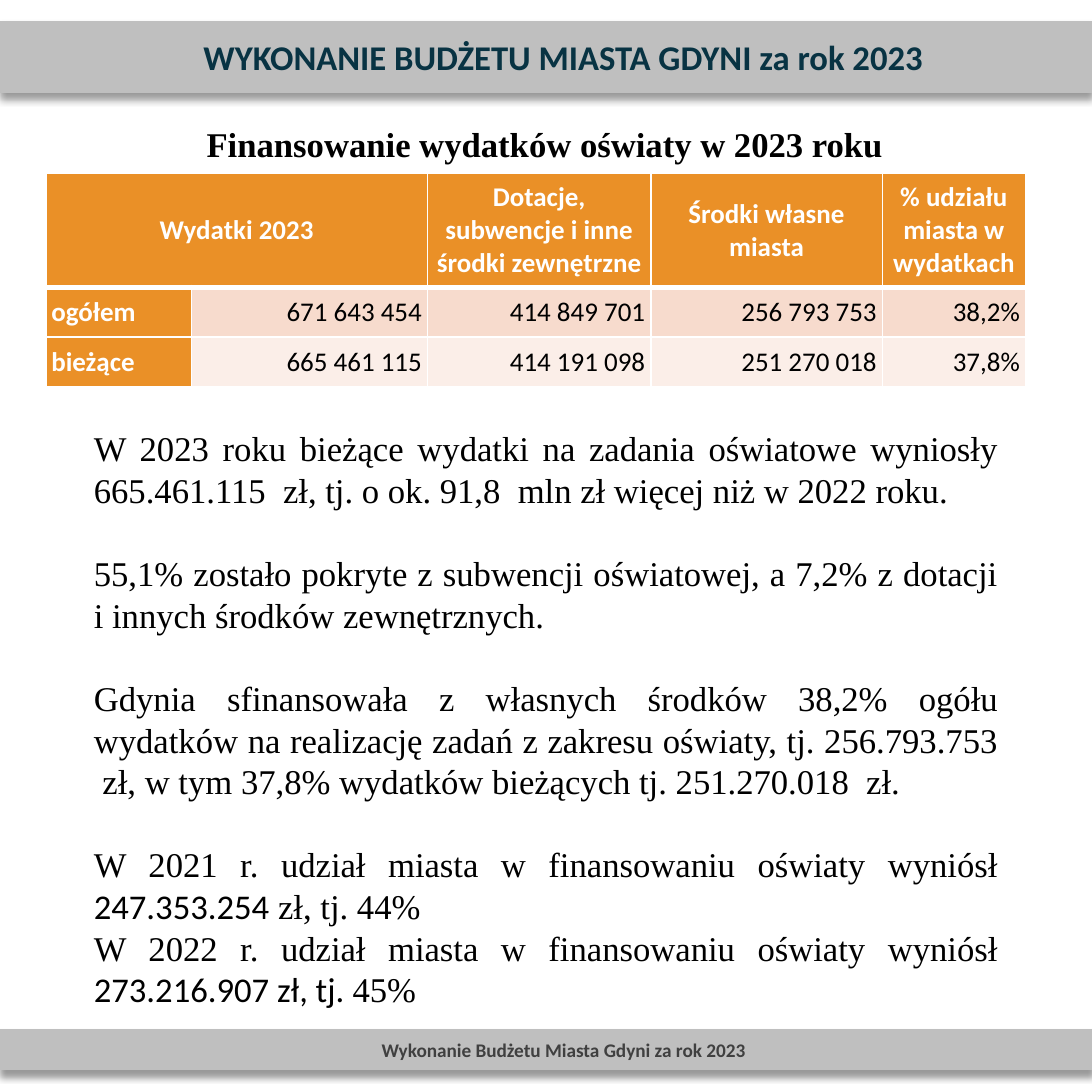
from dataclasses import dataclass

from lxml import etree
from pptx import Presentation
from pptx import util as u
from pptx.dml.color import RGBColor
from pptx.enum import shapes, text
from pptx.oxml import ns


@dataclass(frozen=True)
class Theme:
    sans: str = "Calibri"
    serif: str = "Times New Roman"
    bar: str = "BFBFBF"
    title: str = "083343"
    footer: str = "404040"
    ink: str = "000000"
    paper: str = "FFFFFF"
    accent: str = "EA9027"
    bands: tuple = ("F7DBCD", "FBEEE8")
    body_size: float = 18
    table_size: float = 14
    footer_size: float = 10
    body_leading: float = 21.6


THEME = Theme()
ALIGN = text.PP_ALIGN

HEADERS = [
    "Wydatki 2023",
    None,
    "Dotacje, subwencje i inne środki zewnętrzne",
    "Środki własne miasta",
    "% udziału miasta w wydatkach",
]
ROWS = [
    ["ogółem", "671 643 454", "414 849 701", "256 793 753", "38,2%"],
    ["bieżące", "665 461 115", "414 191 098", "251 270 018", "37,8%"],
]
COLUMN_WIDTHS = [2.67, 4.32, 4.09, 4.24, 2.62]
ROW_HEIGHTS = [2.08, 0.91, 0.91]

SERIF, SANS = THEME.serif, THEME.sans
BODY = [
    ([("W 2023 roku bieżące wydatki na zadania oświatowe wyniosły "
       "665.461.115  zł, tj. o ok. 91,8  mln zł więcej niż w 2022 roku. ", SERIF)], True),
    ([("55,1% zostało pokryte z subwencji oświatowej, a 7,2% z dotacji "
       "i innych środków zewnętrznych. ", SERIF)], True),
    ([("Gdynia sfinansowała z własnych środków 38,2% ogółu wydatków na realizację "
       "zadań z zakresu oświaty, tj. 256.793.753  zł, w tym 37,8% wydatków "
       "bieżących tj. 251.270.018  zł.", SERIF)], True),
    ([("W 2021 r. udział miasta w finansowaniu oświaty wyniósł ", SERIF),
      ("247.353.254", SANS), (" zł, tj. 44%", SERIF)], False),
    ([("W 2022 r. udział miasta w finansowaniu oświaty wyniósł ", SERIF),
      ("273.216.907 zł, tj. ", SANS), ("45%", SERIF)], False),
]


def rgb(color):
    return RGBColor.from_string(color)


def cm_box(box):
    return [u.Cm(v) for v in box]


def add_run(p, words, font, size, color, bold=False):
    r = p.add_run()
    r.text = words
    r.font.name = font
    r.font.size = u.Pt(size)
    r.font.bold = bold
    r.font.color.rgb = rgb(color)


def add_shadow(sp):
    sp.shadow.inherit = False
    effects = sp._element.spPr.find(ns.qn("a:effectLst"))
    shadow = etree.SubElement(effects, ns.qn("a:outerShdw"), blurRad=str(u.Pt(4)),
                              dist=str(u.Pt(3)), dir="5400000", rotWithShape="0")
    color = etree.SubElement(shadow, ns.qn("a:srgbClr"), val=THEME.ink)
    etree.SubElement(color, ns.qn("a:alpha"), val="40000")


def add_bar(s, box, words, size, color):
    sp = s.shapes.add_shape(shapes.MSO_SHAPE.RECTANGLE, *cm_box(box))
    sp.fill.solid()
    sp.fill.fore_color.rgb = rgb(THEME.bar)
    sp.line.color.rgb = rgb(THEME.bar)
    sp.line.width = u.Pt(1)
    add_shadow(sp)
    tf = sp.text_frame
    tf.word_wrap = True
    tf.margin_left = u.Cm(0.89)
    tf.vertical_anchor = text.MSO_ANCHOR.MIDDLE
    p = tf.paragraphs[0]
    p.alignment = ALIGN.CENTER
    add_run(p, words, THEME.sans, size, color, True)


def add_heading(s, box, words):
    tf = s.shapes.add_textbox(*cm_box(box)).text_frame
    tf.word_wrap = True
    p = tf.paragraphs[0]
    p.alignment = ALIGN.CENTER
    add_run(p, words, THEME.serif, THEME.body_size, THEME.ink, True)


def add_body(s, box):
    tf = s.shapes.add_textbox(*cm_box(box)).text_frame
    tf.word_wrap = True
    for i, (runs, gap) in enumerate(BODY):
        p = tf.add_paragraph() if i else tf.paragraphs[0]
        p.alignment = ALIGN.JUSTIFY
        p.line_spacing = u.Pt(THEME.body_leading)
        p.space_after = u.Pt(THEME.body_leading if gap else 0)
        for words, font in runs:
            add_run(p, words, font, THEME.body_size, THEME.ink)


def add_borders(cell, is_header, below_header):
    tcPr = cell._tc.get_or_add_tcPr()
    widths = {"lnL": 1, "lnR": 1, "lnT": 3 if below_header else 1, "lnB": 3 if is_header else 1}
    for side, width in widths.items():
        line = etree.SubElement(tcPr, ns.qn("a:" + side), w=str(u.Pt(width)))
        fill = etree.SubElement(line, ns.qn("a:solidFill"))
        etree.SubElement(fill, ns.qn("a:srgbClr"), val=THEME.paper)


def fill_cell(cell, words, row, col):
    is_header = row == 0
    is_accent = is_header or col == 0
    add_borders(cell, is_header, row == 1)
    cell.fill.solid()
    cell.fill.fore_color.rgb = rgb(THEME.accent if is_accent else THEME.bands[row - 1])
    cell.margin_left = cell.margin_right = u.Cm(0.1)
    cell.margin_top = cell.margin_bottom = u.Cm(0.05)
    cell.vertical_anchor = text.MSO_ANCHOR.MIDDLE
    if words is None:
        return
    p = cell.text_frame.paragraphs[0]
    p.alignment = ALIGN.CENTER if is_header else ALIGN.RIGHT if col else ALIGN.LEFT
    add_run(p, words, THEME.sans, THEME.table_size,
            THEME.paper if is_accent else THEME.ink, is_accent)


def add_spending_table(s, left, top):
    box = cm_box((left, top, sum(COLUMN_WIDTHS), sum(ROW_HEIGHTS)))
    table = s.shapes.add_table(len(ROW_HEIGHTS), len(COLUMN_WIDTHS), *box).table
    table.first_row = table.horz_banding = False
    for column, width in zip(table.columns, COLUMN_WIDTHS):
        column.width = u.Cm(width)
    for row, height in zip(table.rows, ROW_HEIGHTS):
        row.height = u.Cm(height)
    for i, values in enumerate([HEADERS] + ROWS):
        for j, words in enumerate(values):
            fill_cell(table.cell(i, j), words, i, j)
    table.cell(0, 0).merge(table.cell(0, 1))


def main():
    prs = Presentation()
    prs.slide_width = prs.slide_height = u.Cm(20)
    s = prs.slides.add_slide(prs.slide_layouts[6])
    add_bar(s, (0, 18.87, 20, 0.72), "Wykonanie Budżetu Miasta Gdyni za rok 2023",
            THEME.footer_size, THEME.footer)
    add_bar(s, (0, 0.4, 20, 1.28), "WYKONANIE BUDŻETU MIASTA GDYNI za rok 2023",
            THEME.body_size, THEME.title)
    add_heading(s, (2.08, 2.13, 15.8, 1.02), "Finansowanie wydatków oświaty w 2023 roku")
    add_body(s, (1.47, 7.7, 17.07, 13.33))
    add_spending_table(s, 0.84, 3.18)
    prs.save("out.pptx")


if __name__ == "__main__":
    main()
